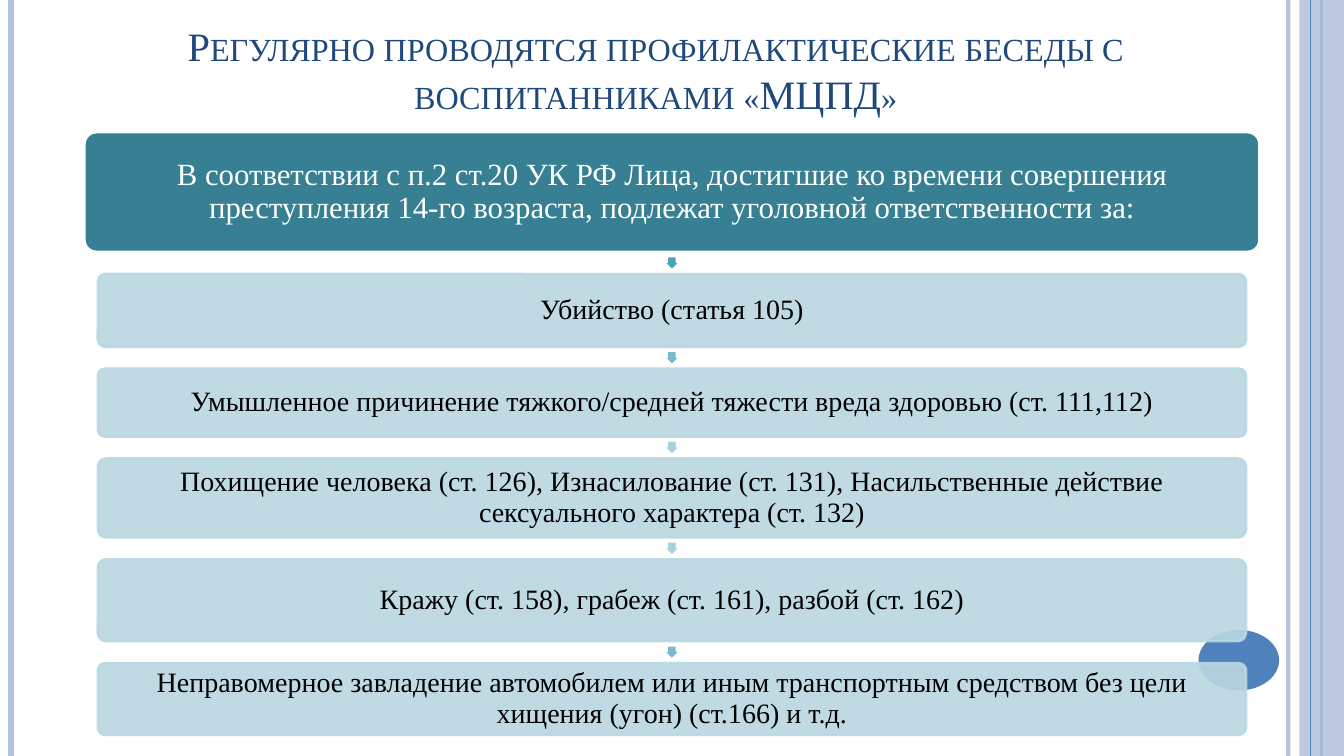
from dataclasses import dataclass

from lxml import etree
from pptx import Presentation
from pptx.dml.color import RGBColor
from pptx.enum.shapes import MSO_CONNECTOR, MSO_SHAPE
from pptx.enum.text import MSO_ANCHOR, MSO_AUTO_SIZE, PP_ALIGN
from pptx.oxml.ns import qn
from pptx.shapes.autoshape import Shape
from pptx.slide import Slide
from pptx.text.text import TextFrame
from pptx.util import Pt

LINE = MSO_CONNECTOR.STRAIGHT
RECT = MSO_SHAPE.RECTANGLE
OVAL = MSO_SHAPE.OVAL
ROUNDED = MSO_SHAPE.ROUNDED_RECTANGLE
DOWN_ARROW = MSO_SHAPE.DOWN_ARROW
CENTER = PP_ALIGN.CENTER
MIDDLE = MSO_ANCHOR.MIDDLE
BOTTOM = MSO_ANCHOR.BOTTOM
NO_FIT = MSO_AUTO_SIZE.NONE

WIDTH, HEIGHT = 960, 540
TOP, GAP, ARROW = 94.32, 15.84, 8


@dataclass(frozen=True)
class Theme:
    font: str = "Times New Roman"
    title_size: float = 28.8
    header_size: float = 22
    item_size: float = 20
    title: str = "1F497D"
    header: str = "377F92"
    item: str = "BAD7E2"
    band: str = "B3C1DB"
    accent: str = "4F81BD"
    white: str = "FFFFFF"
    black: str = "000000"


THEME = Theme()


@dataclass(frozen=True)
class Rule:
    x: float
    weight: float
    color: str
    opacity: int = 100


@dataclass(frozen=True)
class Box:
    text: str
    height: float
    arrow: str = ""
    width: float = 820
    fill: str = THEME.item
    line: str = THEME.item
    opacity: int = 90
    size: float = THEME.item_size
    color: str = THEME.black


BACK_RULES = [
    Rule(920.16, 3, THEME.band, 93),
    Rule(7.92, 4.5, THEME.band),
    Rule(943.92, 1.5, THEME.accent),
]
FRONT_RULE = Rule(936, 0.75, THEME.accent)

TITLE = "Регулярно проводятся профилактические беседы с воспитанниками «МЦПД»"
BOXES = [
    Box("В соответствии с п.2 ст.20 УК РФ\u00a0Лица, достигшие ко времени совершения "
        "преступления 14-го возраста, подлежат уголовной ответственности за:",
        85.68, "48A4BD", 839.5, THEME.header, THEME.white, 100,
        THEME.header_size, THEME.white),
    Box("Убийство (статья 105)", 51.84, "7AB8CC"),
    Box("Умышленное причинение тяжкого/средней тяжести вреда здоровью (ст. 111,112)",
        48.24, "AACFDC"),
    Box("Похищение человека (ст. 126), Изнасилование (ст. 131), Насильственные "
        "действие сексуального характера (ст. 132)", 56.16, "AACFDC"),
    Box("Кражу (ст. 158), грабеж (ст. 161), разбой (ст. 162)", 58.32, "7AB8CC"),
    Box("Неправомерное завладение автомобилем или иным транспортным средством "
        "без цели хищения (угон) (ст.166) и т.д.", 51.12),
]


def set_opacity(element: etree.ElementBase, opacity: int) -> None:
    if opacity < 100:
        for color in element.iter(qn("a:srgbClr")):
            etree.SubElement(color, qn("a:alpha")).set("val", str(opacity * 1000))


def add_rule(s: Slide, rule: Rule) -> None:
    line = s.shapes.add_connector(LINE, Pt(rule.x), Pt(0), Pt(rule.x), Pt(HEIGHT))
    line.line.color.rgb = RGBColor.from_string(rule.color)
    line.line.width = Pt(rule.weight)
    set_opacity(line._element.spPr, rule.opacity)
    etree.SubElement(line._element.spPr, qn("a:effectLst"))


def add_shape(s: Slide, kind: MSO_SHAPE, left: float, top: float, width: float,
              height: float, fill: str, line: str = "", opacity: int = 100) -> Shape:
    sp = s.shapes.add_shape(kind, Pt(left), Pt(top), Pt(width), Pt(height))
    sp.shadow.inherit = False
    sp.fill.solid()
    sp.fill.fore_color.rgb = RGBColor.from_string(fill)
    if line:
        sp.line.color.rgb = RGBColor.from_string(line)
        sp.line.width = Pt(2)
    else:
        sp.line.fill.background()
    set_opacity(sp._element.spPr, opacity)
    return sp


def write_text(tf: TextFrame, text: str, size: float, color: str, anchor: MSO_ANCHOR,
               margin_x: float, margin_y: float, spacing: float) -> None:
    frame_format = {
        "word_wrap": True, "auto_size": NO_FIT, "vertical_anchor": anchor,
        "margin_left": Pt(margin_x), "margin_right": Pt(margin_x),
        "margin_top": Pt(margin_y), "margin_bottom": Pt(margin_y),
    }
    for name, value in frame_format.items():
        setattr(tf, name, value)
    p = tf.paragraphs[0]
    p.alignment = CENTER
    p.line_spacing = spacing
    r = p.add_run()
    r.text = text
    for name, value in {"name": THEME.font, "size": Pt(size)}.items():
        setattr(r.font, name, value)
    r.font.color.rgb = RGBColor.from_string(color)


def add_frame(s: Slide) -> None:
    for rule in BACK_RULES:
        add_rule(s, rule)
    add_shape(s, RECT, 928.08, 0, 31.92, HEIGHT, THEME.band, opacity=87)
    add_rule(s, FRONT_RULE)
    add_shape(s, OVAL, 856.08, 450, 57.6, 43.2, THEME.accent)


def add_title(s: Slide) -> None:
    sp = s.shapes.title
    place = {"left": 37.44, "top": 15.12, "width": 861.84, "height": 73.44}
    for name, value in place.items():
        setattr(sp, name, Pt(value))
    write_text(sp.text_frame, TITLE, THEME.title_size, THEME.title, BOTTOM, 8.64, 4.32, 1.0)
    r = sp.text_frame.paragraphs[0].runs[0]
    r._r.get_or_add_rPr().set("cap", "small")


def add_boxes(s: Slide) -> None:
    top = TOP
    for box in BOXES:
        sp = add_shape(s, ROUNDED, (WIDTH - box.width) / 2, top, box.width, box.height,
                       box.fill, box.line, box.opacity)
        sp.adjustments[0] = 0.1
        write_text(sp.text_frame, box.text, box.size, box.color, MIDDLE, 4, 4, 0.9)
        top += box.height
        if box.arrow:
            arrow = add_shape(s, DOWN_ARROW, (WIDTH - ARROW) / 2, top + (GAP - ARROW) / 2,
                              ARROW, ARROW, box.arrow)
            arrow.adjustments[0] = 0.67
        top += GAP


def main() -> None:
    prs = Presentation()
    prs.slide_width, prs.slide_height = Pt(WIDTH), Pt(HEIGHT)
    s = prs.slides.add_slide(prs.slide_layouts[5])
    add_frame(s)
    add_title(s)
    add_boxes(s)
    prs.save("out.pptx")


if __name__ == "__main__":
    main()
